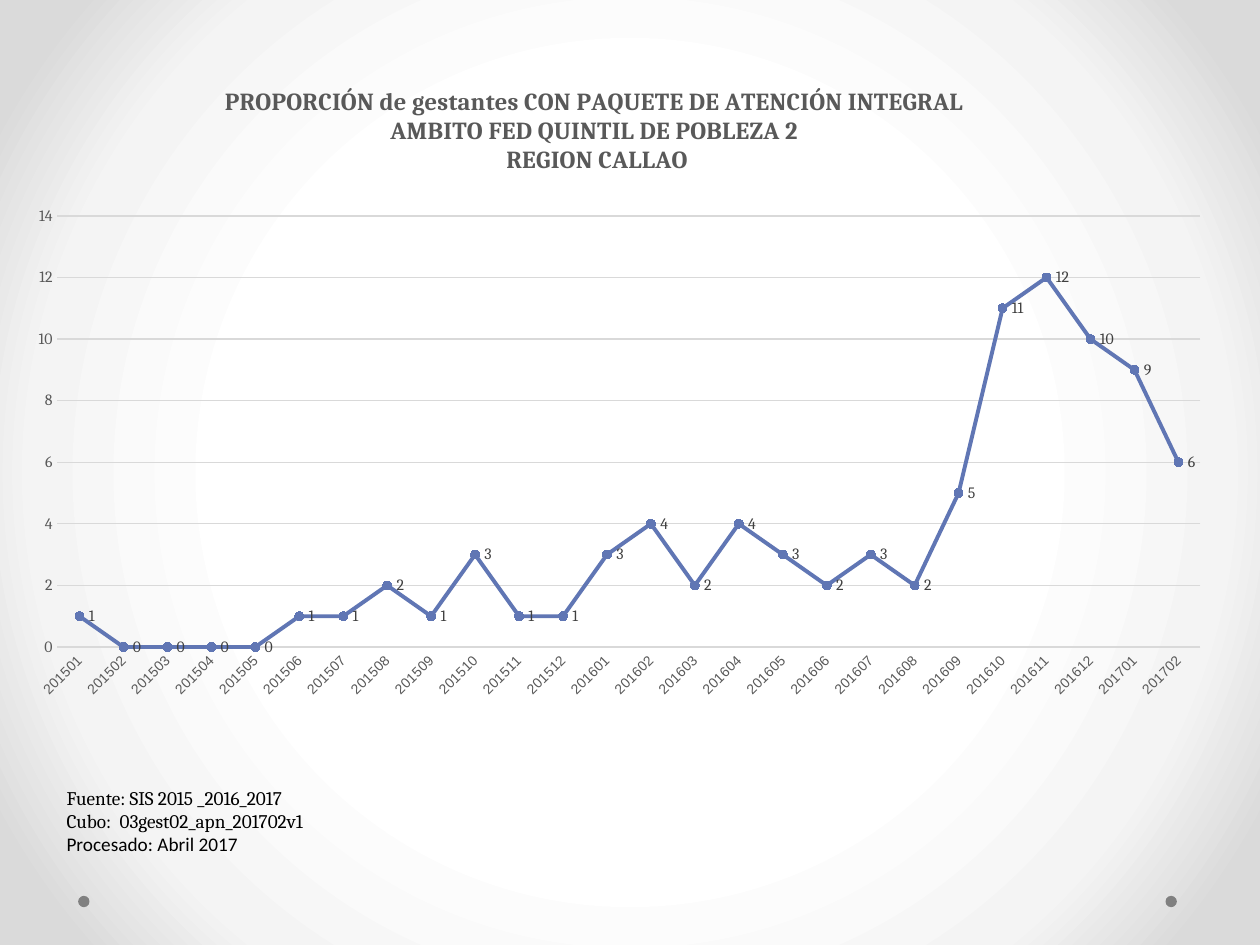
"""Build the slide with the line chart of monthly care packages in Callao."""
from dataclasses import dataclass

from lxml.etree import SubElement
from pptx import Presentation
from pptx.chart.data import CategoryChartData
from pptx.dml.color import RGBColor
from pptx.enum.chart import XL_CHART_TYPE, XL_LABEL_POSITION, XL_MARKER_STYLE, XL_TICK_MARK
from pptx.enum.shapes import MSO_SHAPE
from pptx.oxml import parse_xml
from pptx.oxml.ns import qn
from pptx.util import Inches, Pt


@dataclass(frozen=True)
class Theme:
    ink: str = "000000"
    gray: str = "595959"
    dark: str = "404040"
    grid: str = "D9D9D9"
    blue: str = "6076B4"
    dot: str = "808080"
    glow: tuple = ((50, "FFFFFF"), (76, "F4F4F4"), (92, "DADADA"))
    serif: str = "Cambria"
    sans: str = "Calibri"
    plain: str = "Arial"
    head: int = 14
    note: int = 11
    base: int = 10
    label: int = 9
    month: int = 8


theme = Theme()


def write(item, text=None, size=theme.base, color=theme.ink, face=theme.serif, bold=False):
    """Add text as a run when given, then format the font of the run or item."""
    if text is not None:
        item = item.add_run()
        item.text = text
    font = item.font
    font.size, font.bold, font.name = Pt(size), bold, face
    font.color.rgb = RGBColor.from_string(color)


def place(part, spot, **sizes):
    """Give a chart part a manual layout, as shares of the chart."""
    for old in part.findall(qn("c:layout")):
        part.remove(old)
    layout = SubElement(part, qn("c:layout"))
    part.insert(spot, layout)
    manual = SubElement(layout, qn("c:manualLayout"))
    for name, value in sizes.items():
        SubElement(manual, qn(f"c:{name}")).set("val", str(value))


deck = Presentation()
deck.slide_width, deck.slide_height = Inches(10), Inches(7.5)
slide = deck.slides.add_slide(deck.slide_layouts[6])

slide.background.fill.gradient()
grad = next(slide.element.iter(qn("a:gradFill")))
stops = "".join(
    f'<a:gs pos="{stop * 1000}"><a:srgbClr val="{color}"/></a:gs>' for stop, color in theme.glow
)
grad.getparent().replace(grad, parse_xml(
    '<a:gradFill xmlns:a="http://schemas.openxmlformats.org/drawingml/2006/main" rotWithShape="1">'
    f'<a:gsLst>{stops}</a:gsLst><a:path path="circle">'
    '<a:fillToRect l="50000" t="50000" r="50000" b="50000"/></a:path></a:gradFill>'
))

for left in (9.25, 0.62):
    dot = slide.shapes.add_shape(
        MSO_SHAPE.OVAL, Inches(left), Inches(7.11), Inches(0.09), Inches(0.09)
    )
    dot.shadow.inherit = False
    dot.fill.solid()
    dot.fill.fore_color.rgb = RGBColor.from_string(theme.dot)
    dot.line.fill.background()

box = slide.shapes.add_textbox(Inches(0.43), Inches(6.19), Inches(3.23), Inches(0.84))
frame = box.text_frame
frame.word_wrap = True
notes = (
    ("Fuente: SIS 2015 _2016_2017", theme.serif),
    ("Cubo:  03gest02_apn_201702v1", theme.serif),
    ("Procesado: Abril 2017", theme.sans),
)
for i, (text, face) in enumerate(notes):
    para = frame.add_paragraph() if i else frame.paragraphs[0]
    write(para, text, size=theme.note, face=face)

counts = [1, 0, 0, 0, 0, 1, 1, 2, 1, 3, 1, 1, 3, 4, 2, 4, 3, 2, 3, 2, 5, 11, 12, 10, 9, 6]
data = CategoryChartData(number_format="0")
data.categories = [f"{2015 + i // 12}{i % 12 + 1:02}" for i in range(len(counts))]
data.add_series("Series 1", counts)
chart = slide.shapes.add_chart(
    XL_CHART_TYPE.LINE_MARKERS, Inches(0.12), Inches(0.6), Inches(9.61), Inches(5.04), data
).chart
write(chart)
chart.has_legend = False

chart.has_title = True
title = chart.chart_title.text_frame
lines = (
    "PROPORCIÓN de gestantes CON PAQUETE DE ATENCIÓN INTEGRAL ",
    "AMBITO FED QUINTIL DE POBLEZA 2 ",
    "REGION CALLAO",
)
for i, text in enumerate(lines):
    para = title.add_paragraph() if i else title.paragraphs[0]
    write(para, text, size=theme.head, color=theme.gray, bold=True)

root = chart.element.find(qn("c:chart"))
place(root.find(qn("c:title")), 1, xMode="edge", yMode="edge", x=0.17, y=0.01)
place(root.find(qn("c:plotArea")), 0, layoutTarget="inner", xMode="edge", yMode="edge",
      x=0.035, y=0.221, w=0.944, h=0.679)

months, scale = chart.category_axis, chart.value_axis
write(months.tick_labels, size=theme.month, color=theme.gray, face=theme.plain)
write(scale.tick_labels, size=theme.label, color=theme.gray)
for axis in (months, scale):
    axis.major_tick_mark = axis.minor_tick_mark = XL_TICK_MARK.NONE
next(months.tick_labels.font._element.iterancestors(qn("c:txPr"))) \
    .find(qn("a:bodyPr")).set("rot", "-2700000")
scale.minimum_scale, scale.maximum_scale, scale.major_unit = 0, 14, 2
scale.tick_labels.number_format = "0"
scale.tick_labels.number_format_is_linked = False
scale.format.line.fill.background()
scale.has_major_gridlines = True

plot = chart.plots[0]
plot.vary_by_categories = False
series = plot.series[0]
series.smooth = False
series.marker.style, series.marker.size = XL_MARKER_STYLE.CIRCLE, 5
series.marker.format.fill.solid()
series.marker.format.fill.fore_color.rgb = RGBColor.from_string(theme.blue)
strokes = (
    (months, theme.grid, 0.75),
    (scale.major_gridlines, theme.grid, 0.75),
    (series, theme.blue, 2.25),
    (series.marker, theme.blue, 0.75),
)
for item, color, width in strokes:
    item.format.line.color.rgb = RGBColor.from_string(color)
    item.format.line.width = Pt(width)

labels = series.data_labels
labels.show_value = True
labels.position = XL_LABEL_POSITION.RIGHT
labels.number_format, labels.number_format_is_linked = "0", False
write(labels, size=theme.label, color=theme.dark)

deck.save("out.pptx")
